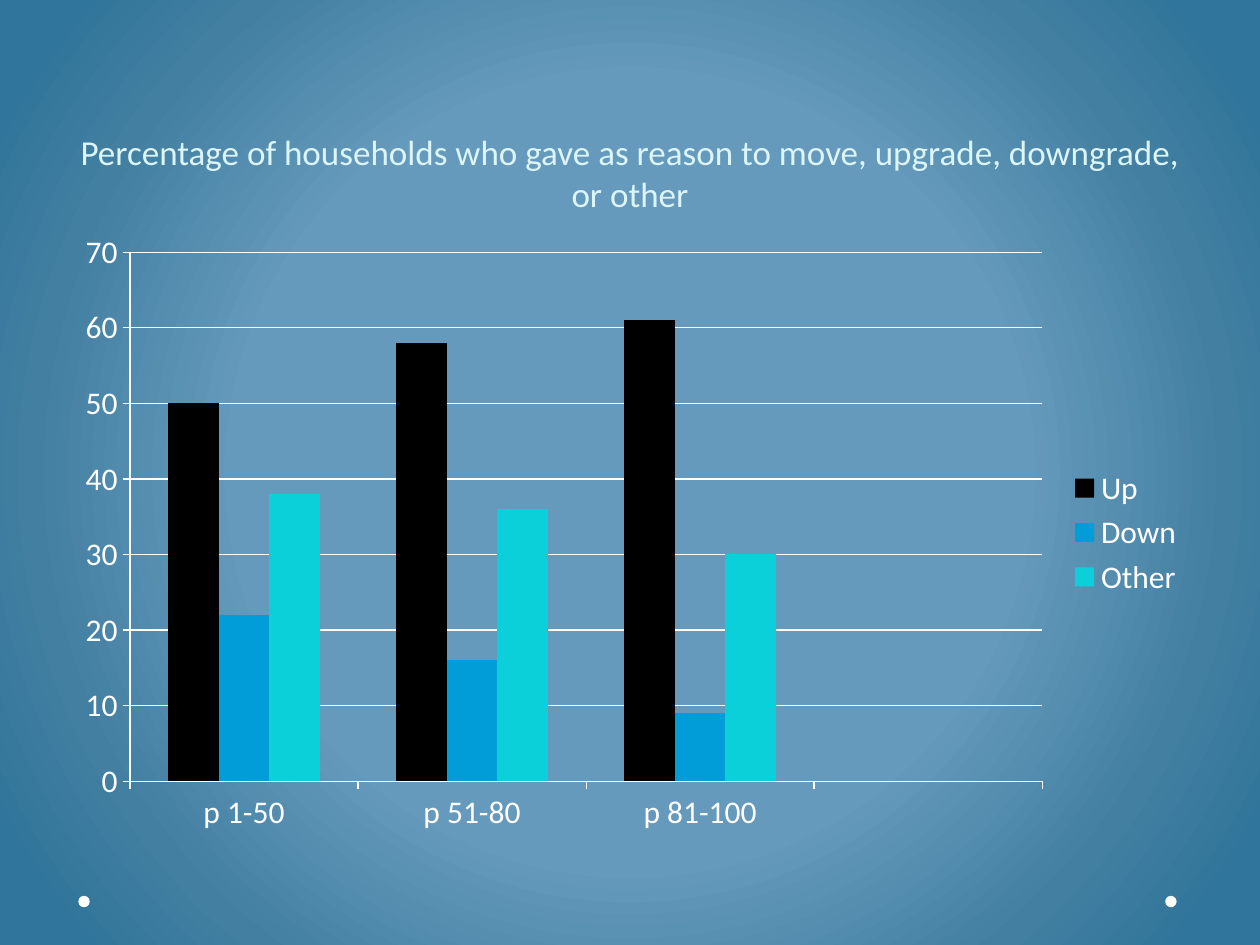
"""Build a slide with a column chart of the reasons households gave for moving."""
import lxml.etree
import pptx
import pptx.chart.data
import pptx.dml.color
import pptx.enum.chart
import pptx.enum.shapes
import pptx.enum.text
import pptx.oxml
import pptx.oxml.ns
import pptx.util
from pptx.util import Cm

TITLE = ("Percentage of households who gave as reason to move, "
         "upgrade, downgrade, or other")
CATEGORIES = ["p 1-50", "p 51-80", "p 81-100", ""]
SERIES = [
    ("Up", [50, 58, 61, None], "000000"),
    ("Down", [22, 16, 9, None], "009DD9"),
    ("Other", [38, 36, 30, None], "0BD0D9"),
]
THEME = {
    "font": "Calibri",
    "title_size": 20,
    "chart_size": 18,
    "title": "DBF5F9",
    "light": "FFFFFF",
    "line_width": 0.75,
    "background": [(50, "659ABC"), (76, "427FA1"), (92, "30759B")],
}
WIDTH, HEIGHT = Cm(25.4), Cm(19.05)
MARGIN = Cm(1.27)
TITLE_HEIGHT = Cm(4.45)
CHART_HEIGHT = Cm(12.57)
DOT_SIZE, DOT_TOP, DOT_INSET = Cm(0.23), Cm(18.06), Cm(1.58)


def color(value):
    return pptx.dml.color.RGBColor.from_string(value)


def style_font(font, size, value):
    font.name = THEME["font"]
    font.size = pptx.util.Pt(size)
    font.color.rgb = color(value)


def style_line(line):
    line.color.rgb = color(THEME["light"])
    line.width = pptx.util.Pt(THEME["line_width"])


def paint_background(page):
    page.background.fill.gradient()
    gradient = page.element.find(".//" + pptx.oxml.ns.qn("a:gradFill"))
    stops = "".join(
        f'<a:gs pos="{position * 1000}"><a:srgbClr val="{value}"/></a:gs>'
        for position, value in THEME["background"])
    radial = pptx.oxml.parse_xml(
        f'<a:gradFill {pptx.oxml.ns.nsdecls("a")} rotWithShape="1">'
        f'<a:gsLst>{stops}</a:gsLst><a:path path="circle">'
        '<a:fillToRect l="50000" t="50000" r="50000" b="50000"/>'
        '</a:path></a:gradFill>')
    gradient.getparent().replace(gradient, radial)


def add_dots(page):
    for left in (WIDTH - DOT_INSET - DOT_SIZE - Cm(0.1), DOT_INSET):
        dot = page.shapes.add_shape(
            pptx.enum.shapes.MSO_SHAPE.OVAL, left, DOT_TOP, DOT_SIZE, DOT_SIZE)
        dot.shadow.inherit = False
        dot.fill.solid()
        dot.fill.fore_color.rgb = color(THEME["light"])
        dot.line.fill.background()


def fill_title(page):
    title = page.shapes.title
    title.left, title.top = MARGIN, 0
    title.width, title.height = WIDTH - 2 * MARGIN, TITLE_HEIGHT
    frame = title.text_frame
    frame.word_wrap = True
    frame.auto_size = pptx.enum.text.MSO_AUTO_SIZE.NONE
    frame.vertical_anchor = pptx.enum.text.MSO_ANCHOR.BOTTOM
    para = frame.paragraphs[0]
    para.alignment = pptx.enum.text.PP_ALIGN.CENTER
    span = para.add_run()
    span.text = TITLE
    style_font(span.font, THEME["title_size"], THEME["title"])


def add_reason_chart(page):
    data = pptx.chart.data.CategoryChartData()
    data.categories = CATEGORIES
    for name, values, _ in SERIES:
        data.add_series(name, values)
    chart = page.shapes.add_chart(
        pptx.enum.chart.XL_CHART_TYPE.COLUMN_CLUSTERED, MARGIN, TITLE_HEIGHT,
        WIDTH - 2 * MARGIN, CHART_HEIGHT, data).chart
    style_font(chart.font, THEME["chart_size"], THEME["light"])
    chart.has_title = False
    chart.has_legend = True
    chart.legend.position = pptx.enum.chart.XL_LEGEND_POSITION.RIGHT
    chart.legend.include_in_layout = False

    plot = chart.plots[0]
    plot.gap_width = 150
    plot.overlap = 0
    plot.vary_by_categories = False
    for series, (_, _, value) in zip(plot.series, SERIES):
        series.invert_if_negative = False
        series.format.fill.solid()
        series.format.fill.fore_color.rgb = color(value)

    for axis in (chart.category_axis, chart.value_axis):
        axis.major_tick_mark = pptx.enum.chart.XL_TICK_MARK.OUTSIDE
        axis.minor_tick_mark = pptx.enum.chart.XL_TICK_MARK.NONE
        style_line(axis.format.line)
    scale = chart.value_axis
    scale.minimum_scale, scale.maximum_scale, scale.major_unit = 0, 70, 10
    scale.has_major_gridlines = True
    style_line(scale.major_gridlines.format.line)


def main():
    deck = pptx.Presentation()
    deck.slide_width, deck.slide_height = WIDTH, HEIGHT
    page = deck.slides.add_slide(deck.slide_layouts.get_by_name("Title Only"))
    paint_background(page)
    add_dots(page)
    fill_title(page)
    add_reason_chart(page)
    deck.save("out.pptx")


if __name__ == "__main__":
    main()
